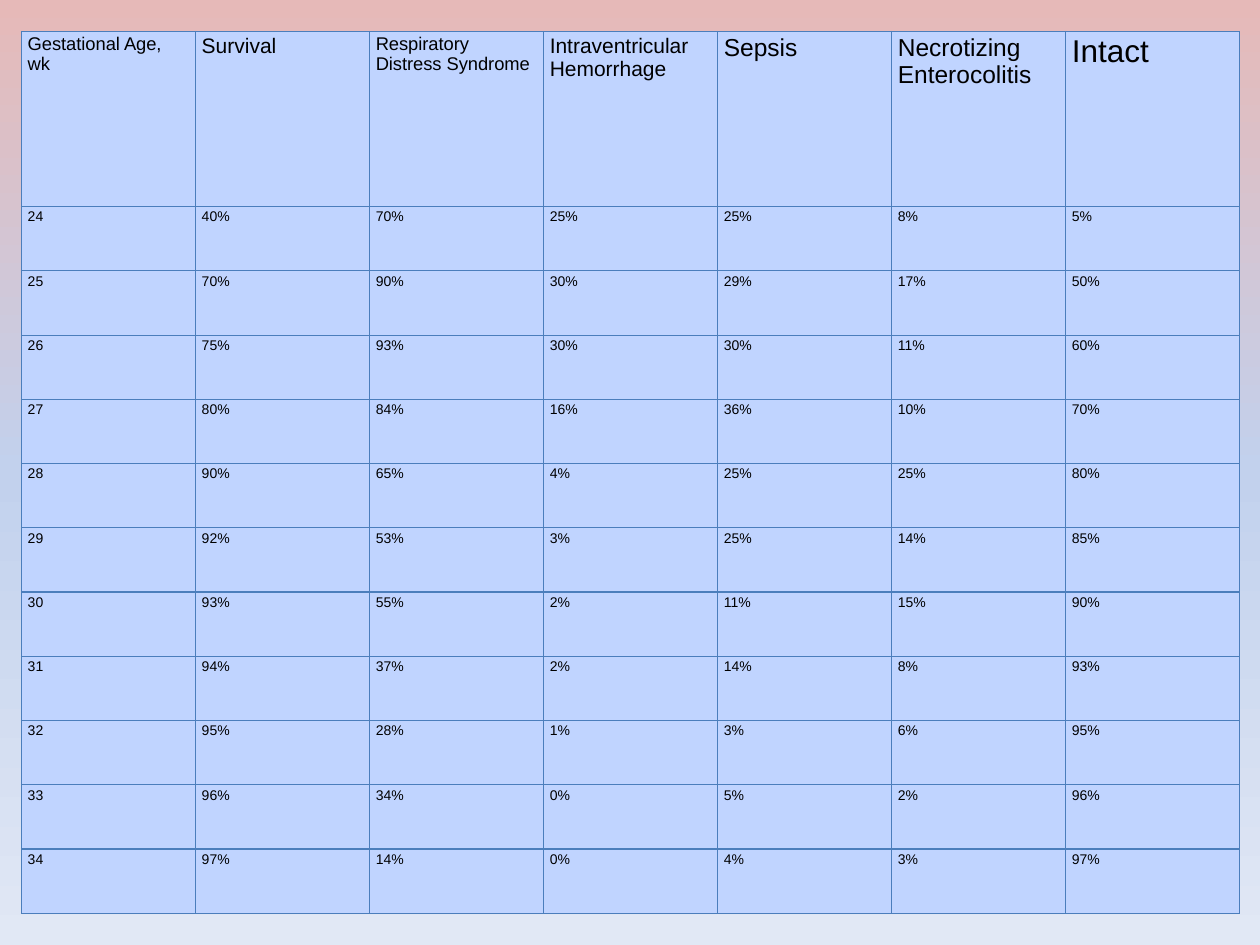
from copy import deepcopy

from lxml.etree import SubElement
from pptx import Presentation
from pptx.dml.color import RGBColor
from pptx.enum.text import PP_ALIGN as Align
from pptx.oxml.ns import qn
from pptx.util import Pt

EMU_PER_PX = 9144  # 100 px to the inch

FONT = "Arial"
TEXT, CELL, BORDER = "000000", "C0D4FF", "4B7EBC"
BACKDROP = [(0, "E6B9B8"), (0.5, "C2D1ED"), (1, "E1E8F5")]

HEADINGS = [
    ("Gestational Age, wk", 10.5),
    ("Survival", 12),
    ("Respiratory Distress Syndrome", 10.5),
    ("Intraventricular Hemorrhage", 12),
    ("Sepsis", 14),
    ("Necrotizing Enterocolitis", 14),
    ("Intact", 18),
]
BODY_SIZE = 8
FIRST_WEEK = 24
OUTCOMES = [
    (40, 70, 25, 25, 8, 5),
    (70, 90, 30, 29, 17, 50),
    (75, 93, 30, 30, 11, 60),
    (80, 84, 16, 36, 10, 70),
    (90, 65, 4, 25, 25, 80),
    (92, 53, 3, 25, 14, 85),
    (93, 55, 2, 11, 15, 90),
    (94, 37, 2, 14, 8, 93),
    (95, 28, 1, 3, 6, 95),
    (96, 34, 0, 5, 2, 96),
    (97, 14, 0, 4, 3, 97),
]


def px(length):
    return length * EMU_PER_PX


def color(code):
    return RGBColor.from_string(code)


def paint_background(page):
    """Fill the page with a three-stop gradient from top to bottom."""
    fill = page.background.fill
    fill.gradient()
    fill.gradient_angle = 270
    stops = page.element.find(f".//{qn('a:gsLst')}")
    stops.insert(1, deepcopy(stops[0]))
    for stop, (position, code) in zip(fill.gradient_stops, BACKDROP):
        stop.position = position
        stop.color.rgb = color(code)


def add_borders(cell):
    properties = cell._tc.get_or_add_tcPr()
    for side in ("a:lnL", "a:lnR", "a:lnT", "a:lnB"):
        line = SubElement(properties, qn(side), w=str(Pt(0.75)))
        paint = SubElement(line, qn("a:solidFill"))
        SubElement(paint, qn("a:srgbClr"), val=BORDER)


def fill_cell(cell, text, size):
    add_borders(cell)
    cell.fill.solid()
    cell.fill.fore_color.rgb = color(CELL)
    cell.margin_left = cell.margin_right = px(5)
    cell.margin_top = cell.margin_bottom = px(2)
    para = cell.text_frame.paragraphs[0]
    para.alignment = Align.LEFT
    span = para.add_run()
    span.text = text
    span.font.name = FONT
    span.font.size = Pt(size)
    span.font.color.rgb = color(TEXT)


def add_outcome_table(page, left, top, width, height, header_height):
    """Place the outcomes by gestational age, with equal columns and body rows."""
    rows = [HEADINGS]
    for week, rates in enumerate(OUTCOMES, FIRST_WEEK):
        texts = [str(week)] + [f"{rate}%" for rate in rates]
        rows.append([(text, BODY_SIZE) for text in texts])

    box = (px(left), px(top), px(width), px(height))
    table = page.shapes.add_table(len(rows), len(HEADINGS), *box).table
    table.first_row = table.horz_banding = False
    for column in table.columns:
        column.width = px(width) // len(HEADINGS)
    for index, row in enumerate(table.rows):
        row.height = px(height - header_height) // len(OUTCOMES) if index else px(header_height)
        for cell, (text, size) in zip(row.cells, rows[index]):
            fill_cell(cell, text, size)


def main():
    deck = Presentation()
    deck.slide_width, deck.slide_height = px(1000), px(750)
    page = deck.slides.add_slide(deck.slide_layouts[6])
    paint_background(page)
    add_outcome_table(page, 17, 25, 967, 700, header_height=139)
    deck.save("out.pptx")


if __name__ == "__main__":
    main()
